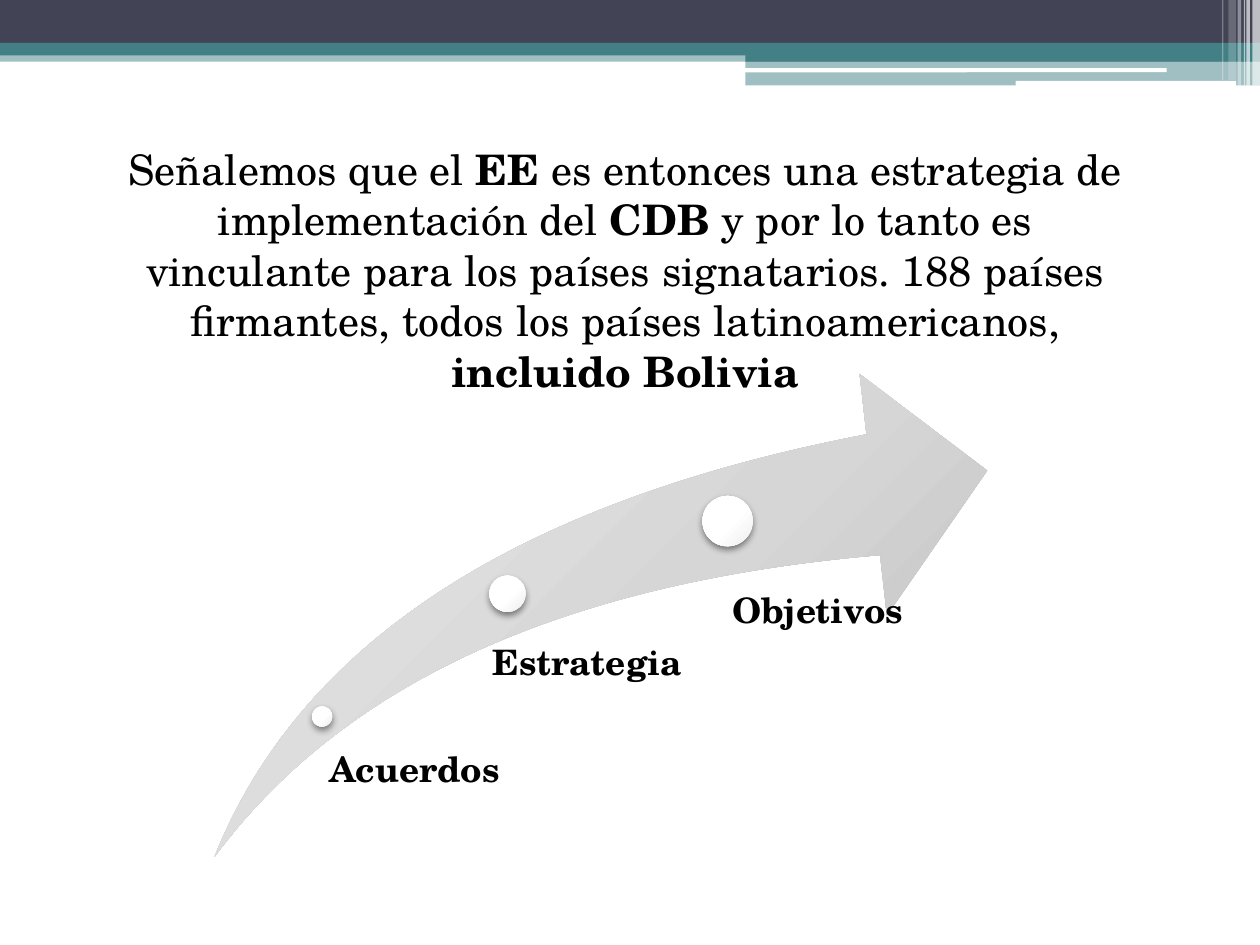
"""Build the slide on the ecosystem approach as a strategy of the convention."""
import pptx
import pptx.dml.color
import pptx.enum.shapes
import pptx.enum.text
import pptx.oxml
import pptx.oxml.ns
import pptx.util

Pt = pptx.util.Pt
SHAPE = pptx.enum.shapes.MSO_SHAPE
ALIGN = pptx.enum.text.PP_ALIGN
FONT = "TeX Gyre Schola"
SLIDE_WIDTH, SLIDE_HEIGHT = 720, 540
NAVY, TEAL, WHITE, BLACK = "424456", "438086", "FFFFFF", "000000"

STATEMENT = [
    ("Señalemos que el ", False),
    ("EE", True),
    (" es entonces una estrategia de implementación del ", False),
    ("CDB", True),
    (" y por lo tanto es vinculante para los países signatarios. "
     "188 países firmantes, todos los países latinoamericanos, ", False),
    ("incluido Bolivia", True),
]
BANDS = [
    (0, 28.8, 720, 6.5, TEAL, 50),
    (0, 0, 720, 24.5, NAVY, 100),
    (0, 24.5, 720, 7.2, TEAL, 100),
    (426, 28.2, 294, 7, TEAL, 100),
    (426, 34.8, 294, 14, TEAL, 50),
]
HIGHLIGHTS = [(425.5, 38.9, 241.2, 2.4), (580.4, 46.2, 126, 2.8)]
STRIPES = [
    (715.7, 4.3, 49, 65),
    (712.2, 2, 49, 65),
    (710.8, 0.7, 49, 60),
    (707.2, 2, 49, 40),
    (702, 4.3, 46, 20),
    (698.4, 0.7, 46, 30),
]
ARROW_BOX = (122.5, 213.7, 441.6, 276)
ARROW_SHADES = ["EBEBEB", "D6D6D6", "BEBEBE"]
DOT_SHADES = ["FFFFFF", "FFFFFF", "EEEEEE"]
MILESTONES = [
    ("Acuerdos", (184.1, 409.5), 11.5, (182.2, 430, 143, 59), 6),
    ("Estrategia", (290, 339.3), 20.8, (270.7, 368.6, 160, 92), 10.8),
    ("Objetivos", (415.8, 297.8), 28.8, (403.2, 339.1, 148, 139), 15.1),
]


def color(hex_value):
    return pptx.dml.color.RGBColor.from_string(hex_value)


def add_figure(slide, kind, box, fill=None, opacity=100):
    figure = slide.shapes.add_shape(kind, *map(Pt, box))
    figure.shadow.inherit = False
    figure.line.fill.background()
    if fill:
        figure.fill.solid()
        figure.fill.fore_color.rgb = color(fill)
    if opacity < 100:
        tint = figure.element.spPr.find(".//" + pptx.oxml.ns.qn("a:srgbClr"))
        tint.append(pptx.oxml.parse_xml(
            f'<a:alpha {pptx.oxml.ns.nsdecls("a")} val="{opacity * 1000}"/>'))
    return figure


def shade(figure, shades):
    stops = "".join(
        f'<a:gs pos="{position * 1000}"><a:srgbClr val="{tone}"/></a:gs>'
        for position, tone in zip((0, 55, 100), shades))
    gradient = pptx.oxml.parse_xml(
        f'<a:gradFill {pptx.oxml.ns.nsdecls("a")} rotWithShape="1">'
        f'<a:gsLst>{stops}</a:gsLst><a:path path="circle">'
        '<a:fillToRect l="-40000" t="-90000" r="140000" b="190000"/>'
        '</a:path></a:gradFill>')
    figure.element.spPr.find(pptx.oxml.ns.qn("a:prstGeom")).addnext(gradient)


def cast_shadow(figure):
    effects = figure.element.spPr.find(pptx.oxml.ns.qn("a:effectLst"))
    effects.append(pptx.oxml.parse_xml(
        f'<a:outerShdw {pptx.oxml.ns.nsdecls("a")} blurRad="{Pt(4)}" '
        f'dist="{Pt(2)}" dir="5400000" rotWithShape="0">'
        f'<a:srgbClr val="{BLACK}"><a:alpha val="45000"/></a:srgbClr>'
        '</a:outerShdw>'))


def add_text(slide, runs, box, size, align=ALIGN.LEFT, spacing=1.0,
             insets=(7.2, 3.6, 7.2, 3.6)):
    frame = slide.shapes.add_textbox(*map(Pt, box)).text_frame
    frame.word_wrap = True
    (frame.margin_left, frame.margin_top,
     frame.margin_right, frame.margin_bottom) = map(Pt, insets)
    paragraph = frame.paragraphs[0]
    paragraph.alignment = align
    paragraph.line_spacing = spacing
    for words, bold in runs:
        run = paragraph.add_run()
        run.text = words
        run.font.name = FONT
        run.font.size = Pt(size)
        run.font.bold = bold
        run.font.color.rgb = color(BLACK)


def main():
    deck = pptx.Presentation()
    deck.slide_width, deck.slide_height = Pt(SLIDE_WIDTH), Pt(SLIDE_HEIGHT)
    slide = deck.slides.add_slide(deck.slide_layouts[6])

    for *box, fill, opacity in BANDS:
        add_figure(slide, SHAPE.RECTANGLE, box, fill, opacity)
    for box in HIGHLIGHTS:
        add_figure(slide, SHAPE.ROUNDED_RECTANGLE, box, WHITE)
    for left, width, height, opacity in STRIPES:
        add_figure(slide, SHAPE.RECTANGLE, (left, 0, width, height), WHITE, opacity)

    arrow = add_figure(slide, SHAPE.SWOOSH_ARROW, ARROW_BOX)
    arrow.adjustments[0] = arrow.adjustments[1] = 0.25
    shade(arrow, ARROW_SHADES)

    for label, (x, y), diameter, label_box, indent in MILESTONES:
        dot_box = (x - diameter / 2, y - diameter / 2, diameter, diameter)
        dot = add_figure(slide, SHAPE.OVAL, dot_box)
        shade(dot, DOT_SHADES)
        cast_shadow(dot)
        add_text(slide, [(label, True)], label_box, 20, spacing=0.9,
                 insets=(indent, 0, 0, 0))

    add_text(slide, STATEMENT, (56.2, 78.5, 602, 124), 24, align=ALIGN.CENTER)
    deck.save("out.pptx")


if __name__ == "__main__":
    main()
